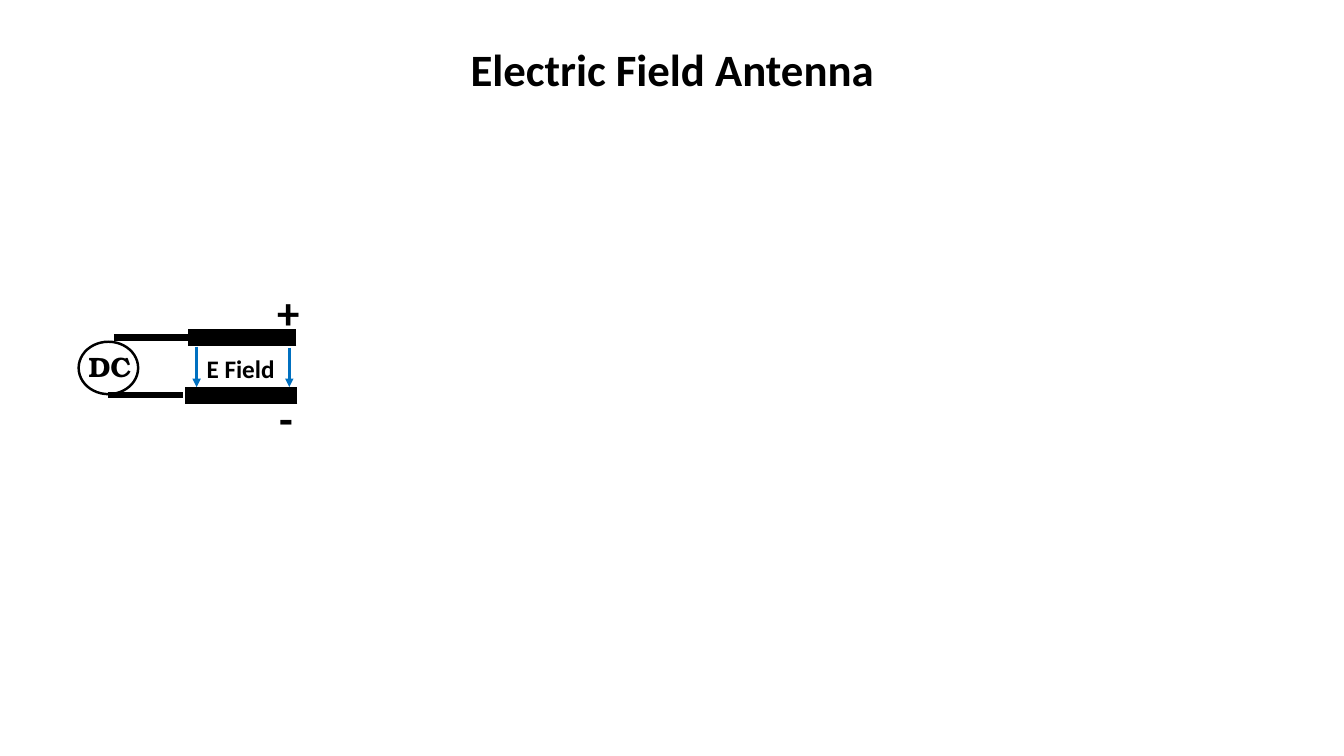
import pptx
import pptx.util
import pptx.dml.color
import pptx.enum.shapes
import pptx.enum.text
import pptx.oxml.ns
import lxml.etree
from pptx.util import Inches

BLACK = pptx.dml.color.RGBColor(0x00, 0x00, 0x00)
BLUE = pptx.dml.color.RGBColor(0x00, 0x70, 0xC0)


def add_text(shapes, text, left, top, width, height, size, font="Calibri",
             wrap=False, align=pptx.enum.text.PP_ALIGN.LEFT,
             anchor=pptx.enum.text.MSO_ANCHOR.TOP, line_spacing=None):
    box = shapes.add_textbox(Inches(left), Inches(top), Inches(width), Inches(height))
    frame = box.text_frame
    frame.word_wrap = wrap
    frame.vertical_anchor = anchor
    if not wrap:
        frame.auto_size = pptx.enum.text.MSO_AUTO_SIZE.SHAPE_TO_FIT_TEXT
    para = frame.paragraphs[0]
    para.alignment = align
    para.line_spacing = line_spacing
    span = para.add_run()
    span.text = text
    span.font.name = font
    span.font.size = pptx.util.Pt(size)
    span.font.bold = True
    span.font.color.rgb = BLACK


def add_line(x1, y1, x2, y2, color, weight, arrow=False):
    line = page.shapes.add_connector(
        pptx.enum.shapes.MSO_CONNECTOR.STRAIGHT,
        Inches(x1), Inches(y1), Inches(x2), Inches(y2))
    line.line.color.rgb = color
    line.line.width = pptx.util.Pt(weight)
    if arrow:
        outline = line.line._get_or_add_ln()
        lxml.etree.SubElement(outline, pptx.oxml.ns.qn("a:tailEnd"), type="triangle")
    properties = line._element.spPr
    lxml.etree.SubElement(properties, pptx.oxml.ns.qn("a:effectLst"))


deck = pptx.Presentation()
deck.slide_width = Inches(13.33)
deck.slide_height = Inches(7.5)
page = deck.slides.add_slide(deck.slide_layouts[6])

# Title
add_text(page.shapes, "Electric Field Antenna", 0.92, 0.4, 11.5, 0.62, 32,
         wrap=True, align=pptx.enum.text.PP_ALIGN.CENTER,
         anchor=pptx.enum.text.MSO_ANCHOR.MIDDLE, line_spacing=0.9)

# Capacitor plates
add_line(2.94, 3.35, 1.86, 3.35, BLACK, 12.25)
add_line(2.95, 3.92, 1.83, 3.92, BLACK, 12.25)

# DC source
source = page.shapes.add_group_shape()
circle = source.shapes.add_shape(
    pptx.enum.shapes.MSO_SHAPE.OVAL,
    Inches(0.78), Inches(3.39), Inches(0.59), Inches(0.52))
circle.shadow.inherit = False
circle.fill.background()
circle.line.color.rgb = BLACK
circle.line.width = pptx.util.Pt(1.75)
add_text(source.shapes, "DC", 0.78, 3.42, 0.63, 0.44, 20, font="TeX Gyre Bonum")

# Wires from the source to the plates
add_line(1.07, 3.92, 1.82, 3.92, BLACK, 4.75)
add_line(1.13, 3.35, 1.87, 3.35, BLACK, 4.75)

# Polarity and field labels
add_text(page.shapes, "+", 2.65, 2.78, 0.43, 0.64, 32)
add_text(page.shapes, "-", 2.67, 3.83, 0.34, 0.64, 32)
add_text(page.shapes, "E Field", 1.95, 3.46, 0.88, 0.4, 18)

# Field arrows
for x, top in ((2.87, 3.45), (1.95, 3.44)):
    add_line(x, top, x, 3.84, BLUE, 1.75, arrow=True)

deck.save("out.pptx")
